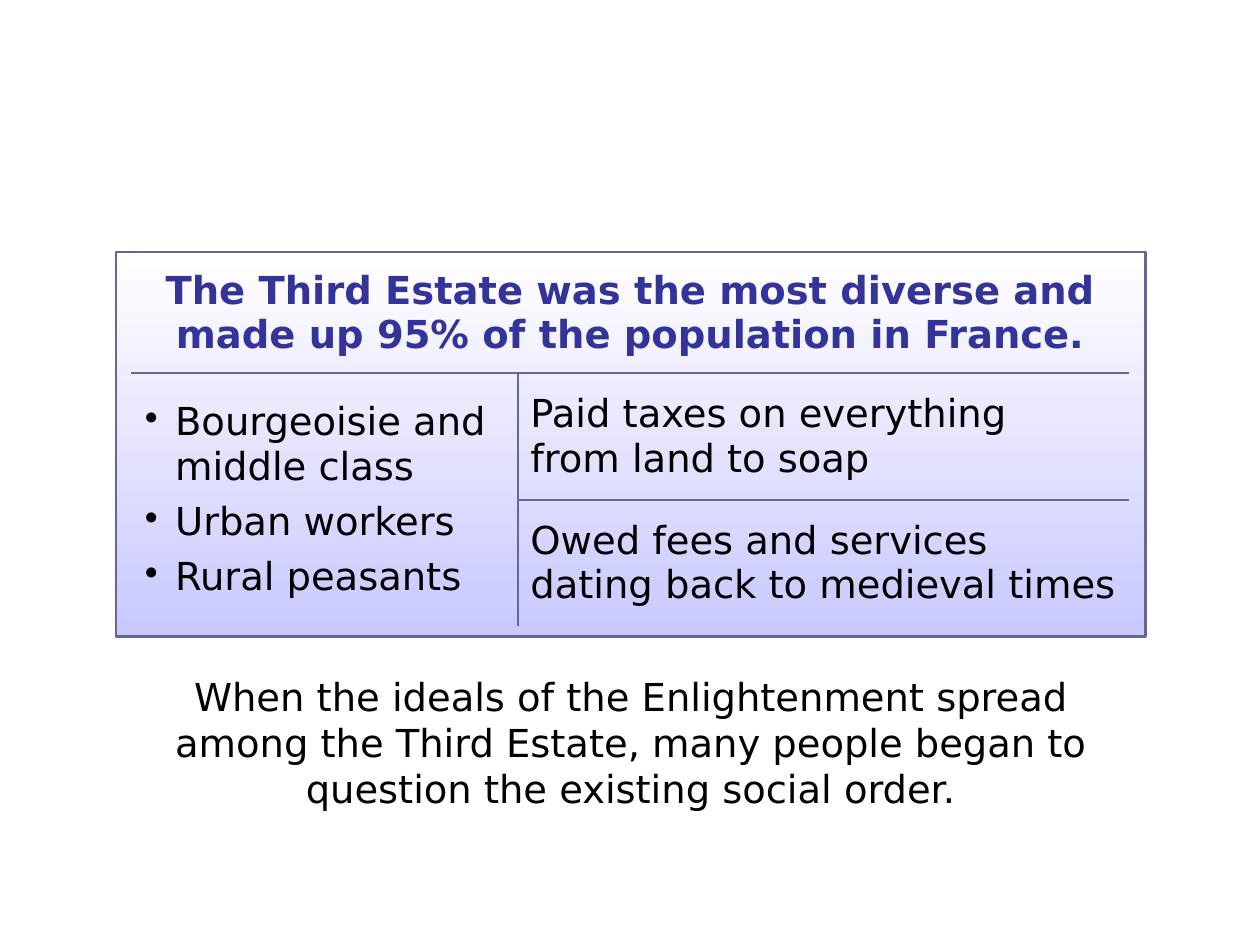
from dataclasses import dataclass

from lxml import etree
from pptx import Presentation, util as u
from pptx.dml.color import RGBColor
from pptx.enum import shapes, text
from pptx.oxml import ns

COLUMNS, ROWS = 10, 7.5
NO_STYLE = "{2D5ABB26-0587-4C30-8999-92F81FD0307C}"


@dataclass(frozen=True)
class Theme:
    font: str = "DejaVu Sans"
    size: float = 22
    ink: str = "000000"
    heading: str = "333399"
    line: str = "666699"
    panel_top: str = "FFFFFF"
    panel_bottom: str = "C9C9FF"
    panel_line: float = 1.5
    table_line: float = 1
    gap: float = 6


class SlideBuilder:
    """Places elements on a grid of COLUMNS by ROWS."""

    def __init__(self, presentation, theme):
        self.theme = theme
        self.column = presentation.slide_width / COLUMNS
        self.row = presentation.slide_height / ROWS
        self.slide = presentation.slides.add_slide(presentation.slide_layouts[6])

    def box(self, left, top, width, height):
        return (int(left * self.column), int(top * self.row),
                int(width * self.column), int(height * self.row))

    def fill_text(self, frame, lines, color=None, bold=False, align=text.PP_ALIGN.LEFT,
                  gap=0, bullet=False):
        frame.word_wrap = True
        for index, line in enumerate(lines):
            paragraph = frame.add_paragraph() if index else frame.paragraphs[0]
            paragraph.text = line
            paragraph.alignment = align
            paragraph.space_after = u.Pt(gap)
            if bullet:
                self.add_bullet(paragraph)
            font = paragraph.font
            font.name, font.size, font.bold = self.theme.font, u.Pt(self.theme.size), bold
            font.color.rgb = RGBColor.from_string(color or self.theme.ink)

    def add_bullet(self, paragraph):
        properties = paragraph._p.get_or_add_pPr()
        properties.set("marL", str(u.Inches(0.25)))
        properties.set("indent", str(u.Inches(-0.24)))
        etree.SubElement(properties, ns.qn("a:buChar"), char="•")

    def panel(self, *place):
        shape = self.slide.shapes.add_shape(shapes.MSO_SHAPE.RECTANGLE, *self.box(*place))
        shape.shadow.inherit = False
        shape.fill.gradient()
        shape.fill.gradient_angle = 270
        ends = (self.theme.panel_top, self.theme.panel_bottom)
        for position, (stop, color) in enumerate(zip(shape.fill.gradient_stops, ends)):
            stop.position = position
            stop.color.rgb = RGBColor.from_string(color)
        shape.line.color.rgb = RGBColor.from_string(self.theme.line)
        shape.line.width = u.Pt(self.theme.panel_line)

    def text(self, place, *lines, **style):
        shape = self.slide.shapes.add_textbox(*self.box(*place))
        self.fill_text(shape.text_frame, lines, **style)

    def table(self, left, top, widths, heights):
        """Add an unstyled, unfilled table and return it."""
        place = self.box(left, top, sum(widths), sum(heights))
        table = self.slide.shapes.add_table(len(heights), len(widths), *place).table
        table.first_row = table.horz_banding = False
        table._tbl.tblPr.find(ns.qn("a:tableStyleId")).text = NO_STYLE
        for column, width in zip(table.columns, widths):
            column.width = int(width * self.column)
        for row, height in zip(table.rows, heights):
            row.height = int(height * self.row)
        return table

    def borders(self, cell, sides):
        """Draw the given sides, in the order L, R, T, B, and clear the fill."""
        properties = cell._tc.get_or_add_tcPr()
        for side in sides:
            line = etree.SubElement(properties, ns.qn(f"a:ln{side}"),
                                    w=str(u.Pt(self.theme.table_line)))
            fill = etree.SubElement(line, ns.qn("a:solidFill"))
            etree.SubElement(fill, ns.qn("a:srgbClr"), val=self.theme.line)
        cell.fill.background()

    def cell(self, cell, *lines, **style):
        cell.vertical_anchor = text.MSO_ANCHOR.MIDDLE
        self.fill_text(cell.text_frame, lines, **style)


def main():
    presentation = Presentation()
    presentation.slide_width, presentation.slide_height = u.Inches(10), u.Inches(7.5)
    theme = Theme()
    builder = SlideBuilder(presentation, theme)
    center = text.PP_ALIGN.CENTER

    builder.panel(0.92, 2, 8.17, 3.05)
    table = builder.table(1.04, 2.01, widths=(3.07, 4.85), heights=(0.95, 1.01, 1))
    for row, sides in enumerate((("B", "B"), ("RT", "LTB"), ("R", "LT"))):
        for column, drawn in enumerate(sides):
            builder.borders(table.cell(row, column), drawn)
    table.cell(0, 0).merge(table.cell(0, 1))
    table.cell(1, 0).merge(table.cell(2, 0))

    builder.cell(table.cell(0, 0),
                 "The Third Estate was the most diverse and made up 95% of the "
                 "population in France.",
                 color=theme.heading, bold=True, align=center)
    builder.cell(table.cell(1, 0), "Bourgeoisie and middle class", "Urban workers",
                 "Rural peasants", gap=theme.gap, bullet=True)
    builder.cell(table.cell(1, 1), "Paid taxes on everything\vfrom land to soap")
    builder.cell(table.cell(2, 1), "Owed fees and services dating back to medieval times",
                 gap=theme.gap)

    builder.text((0.92, 5.29, 8.17, 1.2),
                 "When the ideals of the Enlightenment spread among the Third Estate, "
                 "many people began to question the existing social order.",
                 align=center)
    presentation.save("out.pptx")


if __name__ == "__main__":
    main()
